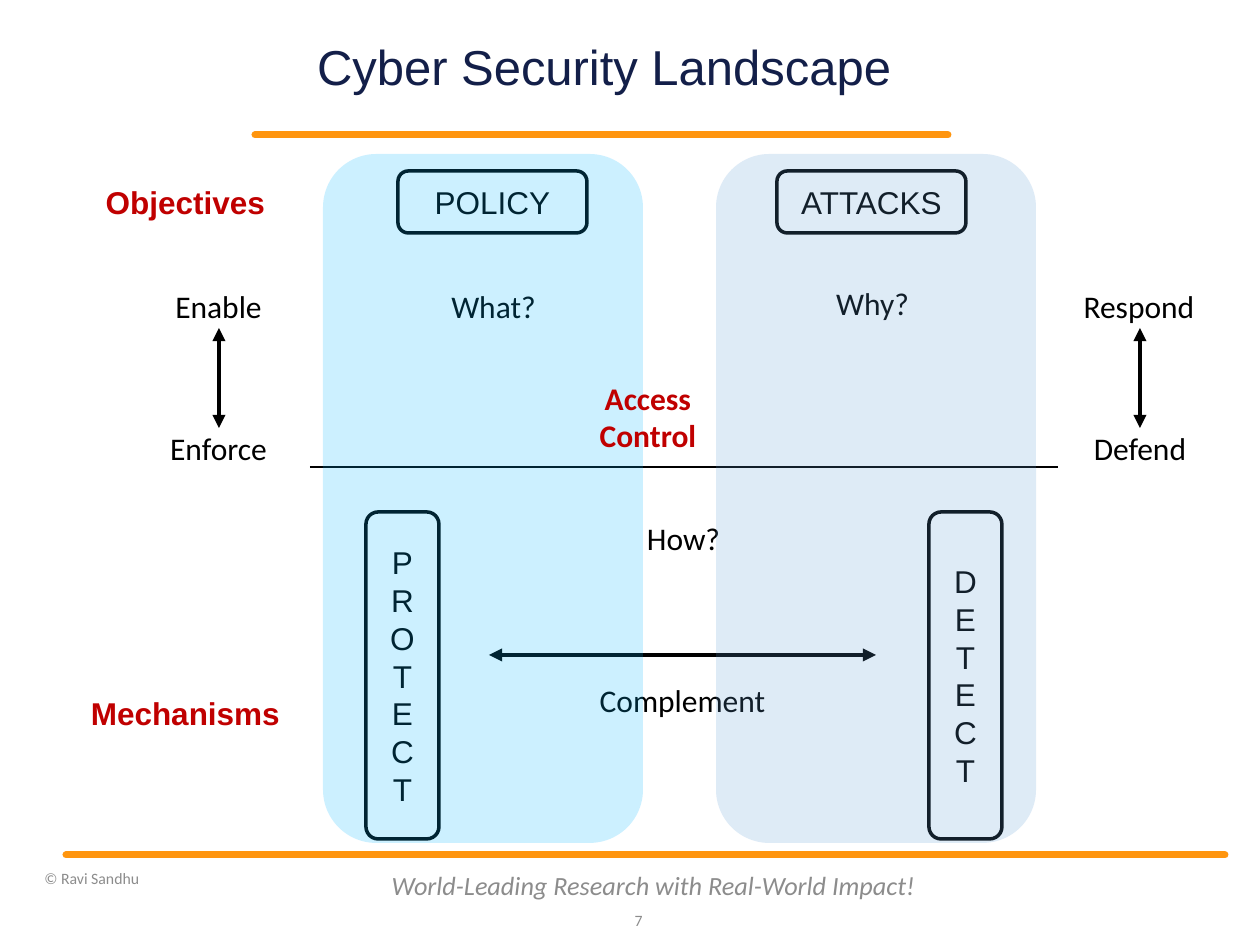
from dataclasses import dataclass

from lxml.etree import SubElement
from pptx import Presentation
from pptx.dml.color import RGBColor
from pptx.enum.shapes import MSO_CONNECTOR, MSO_SHAPE
from pptx.enum.text import MSO_ANCHOR, PP_ALIGN
from pptx.oxml.ns import qn
from pptx.util import Emu, Pt

PX_PER_INCH = 126
BLACK, WHITE, RED = "000000", "FFFFFF", "C00000"
GRAY, ORANGE, NAVY = "8C8C8C", "FF950E", "131F49"
BOX_WIDTH, BOX_HEIGHT = 189, 62
PILLAR_WIDTH, PILLAR_HEIGHT = 73, 327
LABEL_HEIGHT = 50


@dataclass(frozen=True)
class Style:
    size: int = 18
    font: str = "Calibri"
    color: str = BLACK
    bold: bool = False
    italic: bool = False
    align: PP_ALIGN = PP_ALIGN.CENTER
    anchor: MSO_ANCHOR = MSO_ANCHOR.TOP
    wrap: bool = False


@dataclass(frozen=True)
class Label:
    text: str
    left: int
    top: int
    width: int
    height: int = LABEL_HEIGHT
    style: Style = Style()


@dataclass(frozen=True)
class Box:
    left: int
    top: int
    width: int = BOX_WIDTH
    height: int = BOX_HEIGHT
    text: str = ""
    style: Style = Style(font="Arial", anchor=MSO_ANCHOR.MIDDLE)
    fill: str | None = WHITE
    opacity: int = 100
    outline: str | None = BLACK
    vertical: bool = False


@dataclass(frozen=True)
class Line:
    start: tuple[int, int]
    end: tuple[int, int]
    width: float
    color: str = BLACK
    arrows: bool = False
    round_cap: bool = False


HEADING = Style(font="Arial", color=RED, bold=True, anchor=MSO_ANCHOR.MIDDLE)
ACCENT = Style(color=RED, bold=True, wrap=True)
TITLE = Style(28, "Arial", NAVY, anchor=MSO_ANCHOR.MIDDLE, wrap=True)
TAGLINE = Style(15, color=GRAY, italic=True, anchor=MSO_ANCHOR.MIDDLE, wrap=True)
CREDIT = Style(9, color=GRAY, align=PP_ALIGN.LEFT, anchor=MSO_ANCHOR.MIDDLE, wrap=True)
PAGE_NUMBER = Style(9, color=GRAY, align=PP_ALIGN.RIGHT, anchor=MSO_ANCHOR.MIDDLE, wrap=True)

RULES = [
    Line((255, 135), (948, 135), 4, ORANGE, round_cap=True),
    Line((66, 855), (1225, 855), 4, ORANGE, round_cap=True),
]
FOOTERS = [
    Label("World-Leading Research with Real-World Impact!", 378, 860, 551, style=TAGLINE),
    Label("7", 605, 895, 50, style=PAGE_NUMBER),
    Label("© Ravi Sandhu", 32, 856, 346, 45, CREDIT),
]
BOXES = [
    Box(366, 512, PILLAR_WIDTH, PILLAR_HEIGHT, "PROTECT", vertical=True),
    Box(929, 512, PILLAR_WIDTH, PILLAR_HEIGHT, "DETECT", vertical=True),
    Box(398, 171, text="POLICY"),
    Box(777, 171, text="ATTACKS"),
    Box(91, 171, text="Objectives", style=HEADING, outline=None),
    Box(91, 682, text="Mechanisms", style=HEADING, outline=None),
]
LINES = [
    Line((489, 655), (876, 655), 2.5, arrows=True),
    Line((310, 467), (1058, 467), 0.75),
    Line((219, 428), (219, 328), 2.5, arrows=True),
    Line((1140, 428), (1140, 328), 2.5, arrows=True),
]
LABELS = [
    Label("Complement", 580, 675, 205),
    Label("How?", 630, 513, 107),
    Label("What?", 435, 281, 117),
    Label("Why?", 819, 278, 107),
    Label("Enforce", 151, 423, 135),
    Label("Enable", 156, 281, 125),
    Label("Defend", 1076, 423, 128),
    Label("Respond", 1063, 281, 152),
]
OVERLAYS = [
    Box(323, 154, 320, 689, fill="00B8FF", opacity=20, outline=None),
    Box(573, 368, 150, 93, "Access\nControl", ACCENT, fill=None, outline=None),
    Box(716, 154, 320, 689, fill="5B9BD5", opacity=20, outline=None),
]


def px(length: int) -> Emu:
    return Emu(round(length * 914400 / PX_PER_INCH))


def rgb(color: str) -> RGBColor:
    return RGBColor.from_string(color)


def write_text(shape, text: str, style: Style) -> None:
    frame = shape.text_frame
    frame.text = text
    frame.word_wrap = style.wrap
    frame.vertical_anchor = style.anchor
    for paragraph in frame.paragraphs:
        paragraph.alignment = style.align
        for run in paragraph.runs:
            font = run.font
            font.name, font.size = style.font, Pt(style.size)
            font.bold, font.italic = style.bold, style.italic
            font.color.rgb = rgb(style.color)


def draw_title(slide, text: str) -> None:
    title = slide.shapes.title
    title.left, title.top, title.width, title.height = map(px, (273, 38, 662, 64))
    write_text(title, text, TITLE)
    frame = title.text_frame
    frame.margin_left = frame.margin_right = frame.margin_top = frame.margin_bottom = 0
    frame.paragraphs[0].line_spacing = 0.9


def draw_label(slide, label: Label) -> None:
    area = map(px, (label.left, label.top, label.width, label.height))
    write_text(slide.shapes.add_textbox(*area), label.text, label.style)


def draw_box(slide, box: Box) -> None:
    area = map(px, (box.left, box.top, box.width, box.height))
    shape = slide.shapes.add_shape(MSO_SHAPE.ROUNDED_RECTANGLE, *area)
    shape.shadow.inherit = False
    if box.fill:
        shape.fill.solid()
        shape.fill.fore_color.rgb = rgb(box.fill)
    else:
        shape.fill.background()
    if box.opacity < 100:
        color = shape._element.spPr.find(".//" + qn("a:srgbClr"))
        SubElement(color, qn("a:alpha"), val=str(box.opacity * 1000))
    if box.outline:
        shape.line.color.rgb = rgb(box.outline)
        shape.line.width = Pt(2)
    else:
        shape.line.fill.background()
    if box.text:
        write_text(shape, box.text, box.style)
    if box.vertical:
        shape.text_frame._txBody.bodyPr.set("vert", "wordArtVert")


def draw_line(slide, line: Line) -> None:
    ends = map(px, (*line.start, *line.end))
    connector = slide.shapes.add_connector(MSO_CONNECTOR.STRAIGHT, *ends)
    connector.line.color.rgb = rgb(line.color)
    connector.line.width = Pt(line.width)
    outline = connector.line._get_or_add_ln()
    if line.round_cap:
        outline.set("cap", "rnd")
    if line.arrows:
        for end in ("a:headEnd", "a:tailEnd"):
            SubElement(outline, qn(end), type="triangle")
    SubElement(connector._element.spPr, qn("a:effectLst"))


def main() -> None:
    presentation = Presentation()
    presentation.slide_width, presentation.slide_height = px(1260), px(945)
    slide = presentation.slides.add_slide(presentation.slide_layouts[5])
    draw_title(slide, "Cyber Security Landscape")
    for draw, items in (
        (draw_line, RULES),
        (draw_label, FOOTERS),
        (draw_box, BOXES),
        (draw_line, LINES),
        (draw_label, LABELS),
        (draw_box, OVERLAYS),
    ):
        for item in items:
            draw(slide, item)
    presentation.save("out.pptx")


if __name__ == "__main__":
    main()
